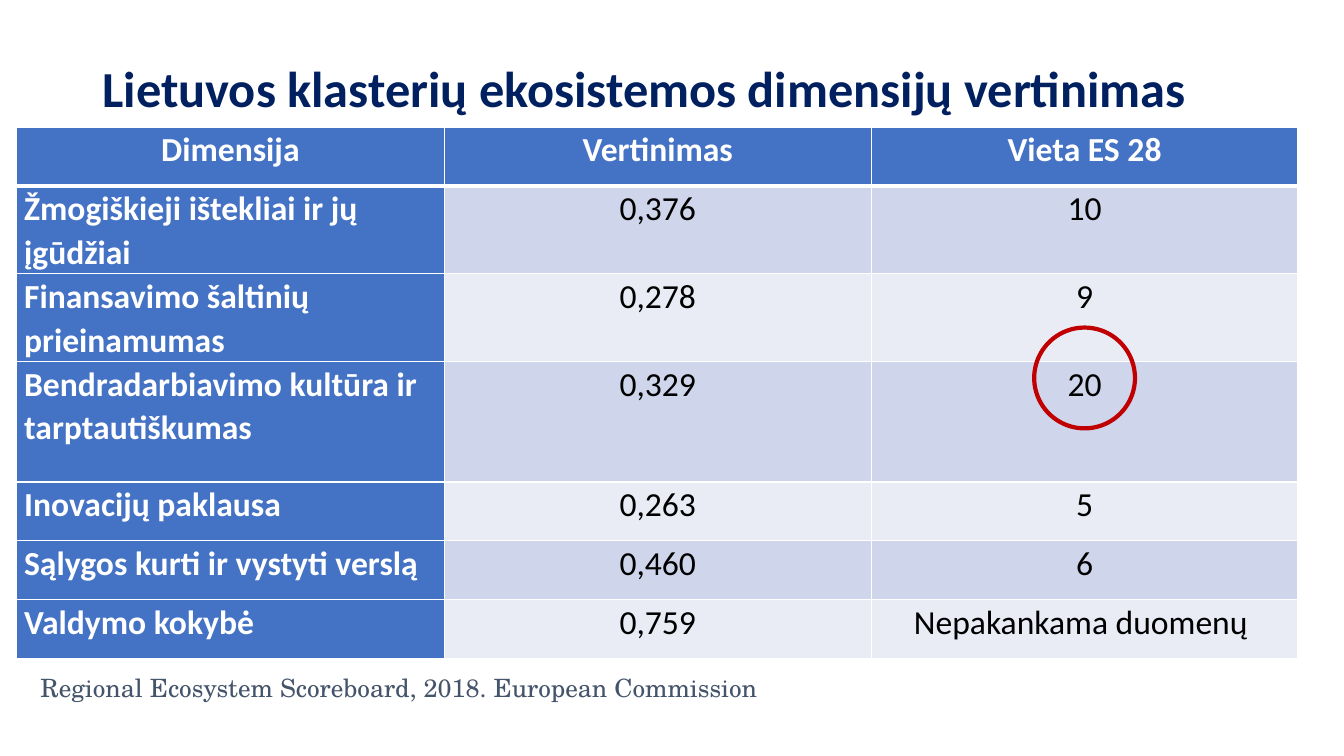
from lxml import etree
from pptx import Presentation
from pptx import util as u
from pptx.dml.color import RGBColor
from pptx.enum import shapes, text
from pptx.oxml.ns import qn

PX = 9525  # EMU in one px, 96 px to the inch
COLORS = {"navy": "002060", "blue": "4472C4", "band": "CFD5EA", "pale": "E9EBF5",
          "white": "FFFFFF", "black": "000000", "red": "C00000", "slate": "44546A"}
LEFT, CENTER = text.PP_ALIGN.LEFT, text.PP_ALIGN.CENTER

HEADER = ["Dimensija", "Vertinimas", "Vieta ES 28"]
RATINGS = [
    ["Žmogiškieji ištekliai ir jų įgūdžiai", "0,376", "10"],
    ["Finansavimo šaltinių prieinamumas", "0,278", "9"],
    ["Bendradarbiavimo kultūra ir tarptautiškumas", "0,329", "20"],
    ["Inovacijų paklausa", "0,263", "5"],
    ["Sąlygos kurti ir vystyti verslą", "0,460", "6"],
    ["Valdymo kokybė", "0,759", "Nepakankama duomenų "],
]


def px(*lengths):
    return [u.Emu(length * PX) for length in lengths]


def color(name):
    return RGBColor.from_string(COLORS[name])


def write(frame, words, size=24, ink="black", bold=False, font="Calibri",
          align=LEFT, spacing=1.0, after=0):
    para = frame.paragraphs[0]
    para.alignment, para.line_spacing = align, spacing
    para.space_before, para.space_after = u.Pt(0), u.Pt(after)
    span = para.add_run()
    span.text = words
    span.font.name, span.font.size, span.font.bold = font, u.Pt(size), bold
    span.font.color.rgb = color(ink)


class SlideBuilder:
    def __init__(self, deck):
        self.page = deck.slides.add_slide(deck.slide_layouts[5])

    def title(self, place, words, **style):
        box = self.page.shapes.title
        box.left, box.top, box.width, box.height = px(*place)
        frame = box.text_frame
        frame.auto_size = text.MSO_AUTO_SIZE.NONE
        frame.vertical_anchor = text.MSO_ANCHOR.MIDDLE
        write(frame, words, **style)

    def label(self, place, words, **style):
        frame = self.page.shapes.add_textbox(*px(*place)).text_frame
        frame.word_wrap = True
        frame.auto_size = text.MSO_AUTO_SIZE.SHAPE_TO_FIT_TEXT
        write(frame, words, **style)

    def ring(self, place, ink, weight):
        oval = self.page.shapes.add_shape(shapes.MSO_SHAPE.OVAL, *px(*place))
        oval.shadow.inherit = False
        oval.fill.background()
        oval.line.color.rgb = color(ink)
        oval.line.width = u.Pt(weight)

    def table(self, left, top, widths, heights, rows):
        table = self.page.shapes.add_table(
            len(rows), len(widths),
            *px(left, top, sum(widths), sum(heights))).table
        for column, width in zip(table.columns, px(*widths)):
            column.width = width
        for row, height in zip(table.rows, px(*heights)):
            row.height = height
        for r, row in enumerate(rows):
            for c, words in enumerate(row):
                self.cell(table.cell(r, c), words, r, c)

    def cell(self, cell, words, r, c):
        heading = r == 0 or c == 0
        fill = "blue" if heading else ("band" if r % 2 else "pale")
        cell.margin_left = cell.margin_right = px(7)[0]
        cell.margin_top = cell.margin_bottom = 0
        cell.fill.solid()
        cell.fill.fore_color.rgb = color(fill)
        write(cell.text_frame, words, ink="white" if heading else "black", bold=heading,
              align=LEFT if r and c == 0 else CENTER, spacing=1.07)
        # The line under the header row is thicker
        weights = {"L": 1, "R": 1, "T": 3 if r == 1 else 1, "B": 3 if r == 0 else 1}
        for index, (side, weight) in enumerate(weights.items()):
            line = etree.Element(qn("a:ln" + side), w=str(u.Pt(weight)))
            solid = etree.SubElement(line, qn("a:solidFill"))
            etree.SubElement(solid, qn("a:srgbClr"), val=COLORS["white"])
            cell._tc.get_or_add_tcPr().insert(index, line)


def main():
    deck = Presentation()
    deck.slide_width, deck.slide_height = px(1280, 720)
    slide = SlideBuilder(deck)

    # Title
    slide.title((88, 45, 1148, 83), "Lietuvos klasterių ekosistemos dimensijų vertinimas",
                size=36, ink="navy", bold=True, spacing=0.9)

    # Ratings table
    heights = [56] * 7
    heights[3] = 115
    slide.table(16, 121, [407, 407, 406], heights, [HEADER] + RATINGS)

    # Data source
    slide.label((29, 636, 802, 38), "Regional Ecosystem Scoreboard, 2018. European Commission",
                size=18, ink="slate", font="TeX Gyre Schola",
                align=text.PP_ALIGN.JUSTIFY, after=18)

    # Highlighted rank
    slide.ring((985, 312, 96, 96), "red", 3)

    deck.save("out.pptx")


if __name__ == "__main__":
    main()
